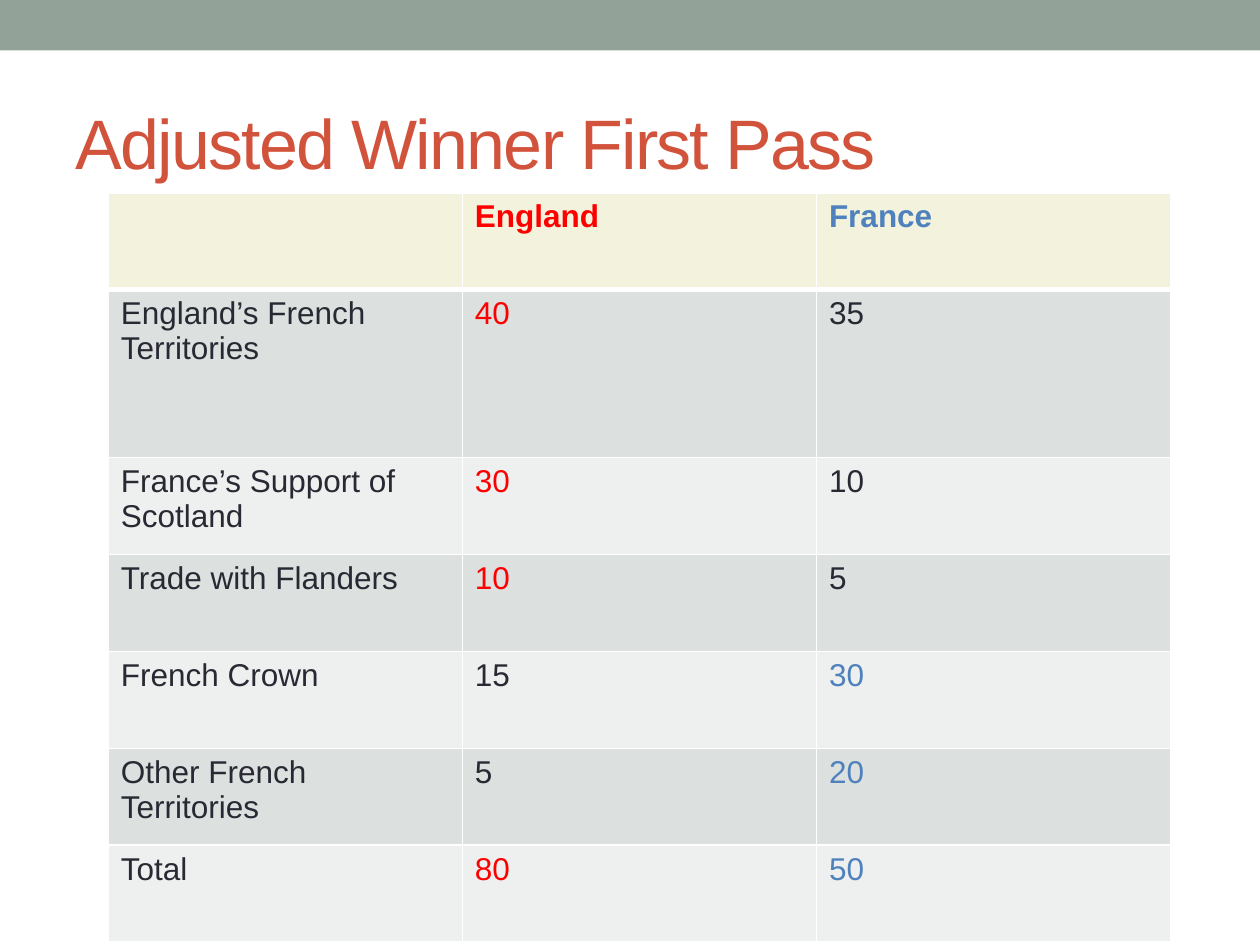
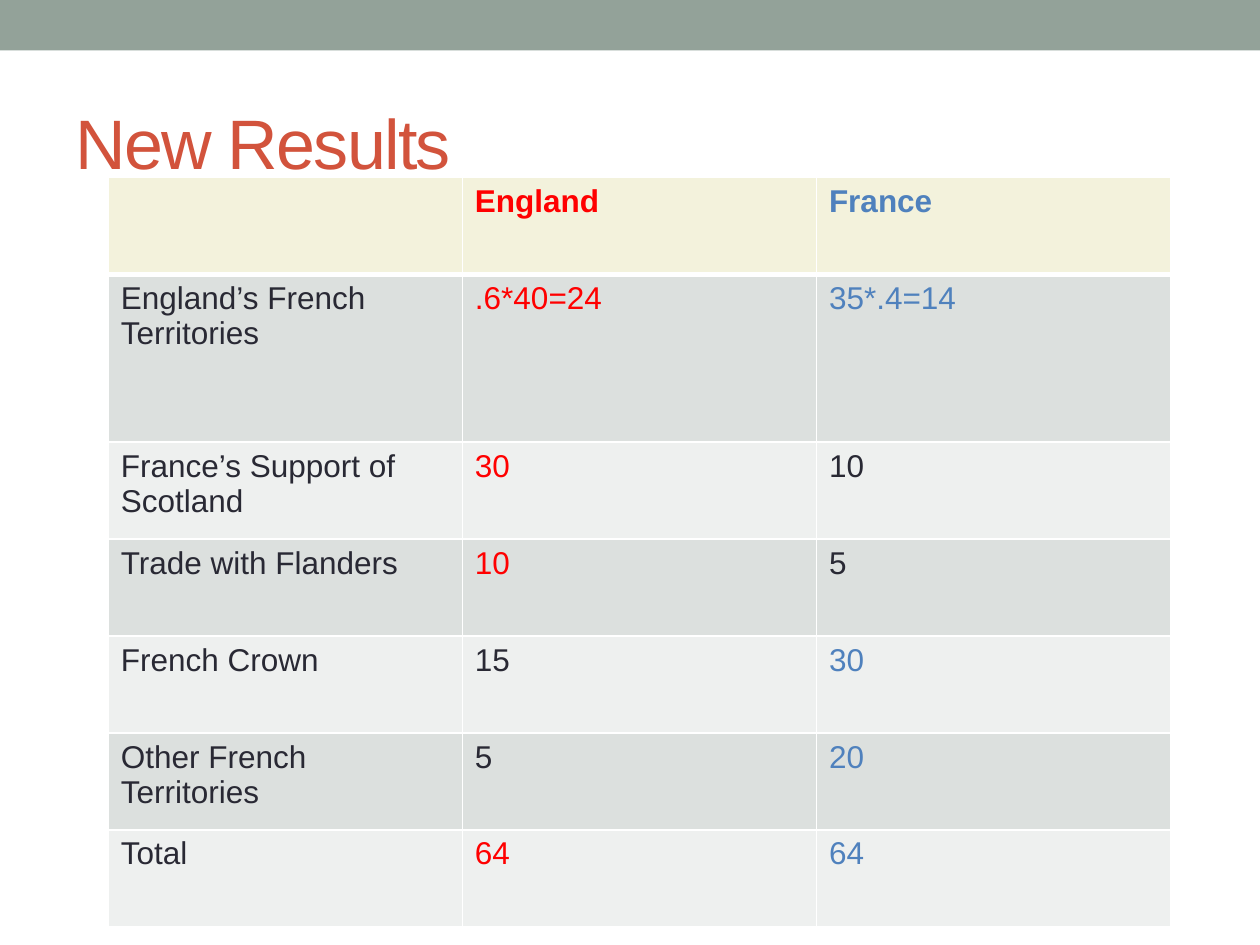
import pptx
import pptx.dml.color
import pptx.enum.shapes
import pptx.enum.text
import pptx.oxml.ns
import pptx.util
from lxml import etree

Inches = pptx.util.Inches
Pt = pptx.util.Pt
RGBColor = pptx.dml.color.RGBColor

# Shared look
FONT = "Arial"
BAND_COLOR = RGBColor(0x93, 0xA2, 0x99)
TITLE_COLOR = RGBColor(0xD2, 0x53, 0x3C)
TEXT_COLOR = RGBColor(0x29, 0x29, 0x34)
ENGLAND_COLOR = RGBColor(0xFF, 0x00, 0x00)
FRANCE_COLOR = RGBColor(0x4F, 0x81, 0xBD)
HEADER_FILL = RGBColor(0xF3, 0xF2, 0xDC)
ROW_FILLS = (RGBColor(0xEE, 0xF0, 0xEF), RGBColor(0xDC, 0xE0, 0xDE))
BORDER_COLOR = RGBColor(0xFF, 0xFF, 0xFF)

COLUMN_WIDTH = 2.81
ROW_HEIGHTS = (0.77, 1.33, 0.77, 0.77, 0.77, 0.77, 0.77)

# Each row: item, England's points, France's points, and who wins (E, F or both)
HEADER_ROW = ("", "England", "France", "EF")
UNSHARED_ROWS = [
    ("France’s Support of Scotland", "30", "10", "E"),
    ("Trade with Flanders", "10", "5", "E"),
    ("French Crown", "15", "30", "F"),
    ("Other French Territories", "5", "20", "F"),
]
# Each slide: title, table top, territories row, total row
SLIDES = [
    ("Adjusted Winner First Pass", 1.53,
     ("England’s French Territories", "40", "35", "E"),
     ("Total", "80", "50", "EF")),
    ("New Results", 1.41,
     ("England’s French Territories", ".6*40=24", "35*.4=14", "EF"),
     ("Total", "64", "64", "EF")),
]


def add_run(paragraph, text, size, color, bold=False):
    run = paragraph.add_run()
    run.text = text
    run.font.name = FONT
    run.font.size = Pt(size)
    run.font.bold = bold
    run.font.color.rgb = color
    return run


def set_borders(cell, widths):
    """Draw the left, right, top and bottom borders, in that order."""
    properties = cell._tc.get_or_add_tcPr()
    for position, (side, width) in enumerate(zip("LRTB", widths)):
        line = etree.Element(pptx.oxml.ns.qn("a:ln" + side), w=str(Pt(width)))
        fill = etree.SubElement(line, pptx.oxml.ns.qn("a:solidFill"))
        etree.SubElement(fill, pptx.oxml.ns.qn("a:srgbClr"), val=str(BORDER_COLOR))
        properties.insert(position, line)


presentation = pptx.Presentation()
presentation.slide_width = Inches(10)
presentation.slide_height = Inches(7.5)
title_only = presentation.slide_layouts.get_by_name("Title Only")

for title_text, table_top, territories_row, total_row in SLIDES:
    slide = presentation.slides.add_slide(title_only)

    # Top band
    band = slide.shapes.add_shape(
        pptx.enum.shapes.MSO_SHAPE.RECTANGLE, 0, 0, Inches(10), Inches(0.4))
    band.shadow.inherit = False
    band.fill.solid()
    band.fill.fore_color.rgb = BAND_COLOR
    band.line.fill.background()

    # Title
    title = slide.shapes.title
    title.left, title.top = Inches(0.5), Inches(0.58)
    title.width, title.height = Inches(9), Inches(1.08)
    title.text_frame.vertical_anchor = pptx.enum.text.MSO_ANCHOR.MIDDLE
    title.text_frame.auto_size = pptx.enum.text.MSO_AUTO_SIZE.NONE
    paragraph = title.text_frame.paragraphs[0]
    paragraph.alignment = pptx.enum.text.PP_ALIGN.LEFT
    run = add_run(paragraph, title_text, 40, TITLE_COLOR)
    run.font._element.set("spc", "-100")

    # Points table
    rows = [HEADER_ROW, territories_row, *UNSHARED_ROWS, total_row]
    table = slide.shapes.add_table(
        len(rows), 3, Inches(0.86), Inches(table_top),
        Inches(3 * COLUMN_WIDTH), Inches(sum(ROW_HEIGHTS))).table
    for column in table.columns:
        column.width = Inches(COLUMN_WIDTH)

    for row_index, (item, england, france, winners) in enumerate(rows):
        table.rows[row_index].height = Inches(ROW_HEIGHTS[row_index])
        is_header = row_index == 0
        colors = (
            TEXT_COLOR,
            ENGLAND_COLOR if "E" in winners else TEXT_COLOR,
            FRANCE_COLOR if "F" in winners else TEXT_COLOR,
        )
        for column_index, text in enumerate((item, england, france)):
            cell = table.cell(row_index, column_index)
            cell.fill.solid()
            cell.fill.fore_color.rgb = HEADER_FILL if is_header else ROW_FILLS[row_index % 2]
            set_borders(cell, (1, 1, 3 if row_index == 1 else 1, 3 if is_header else 1))
            if text:
                add_run(cell.text_frame.paragraphs[0], text, 18,
                        colors[column_index], bold=is_header)

presentation.save("out.pptx")
